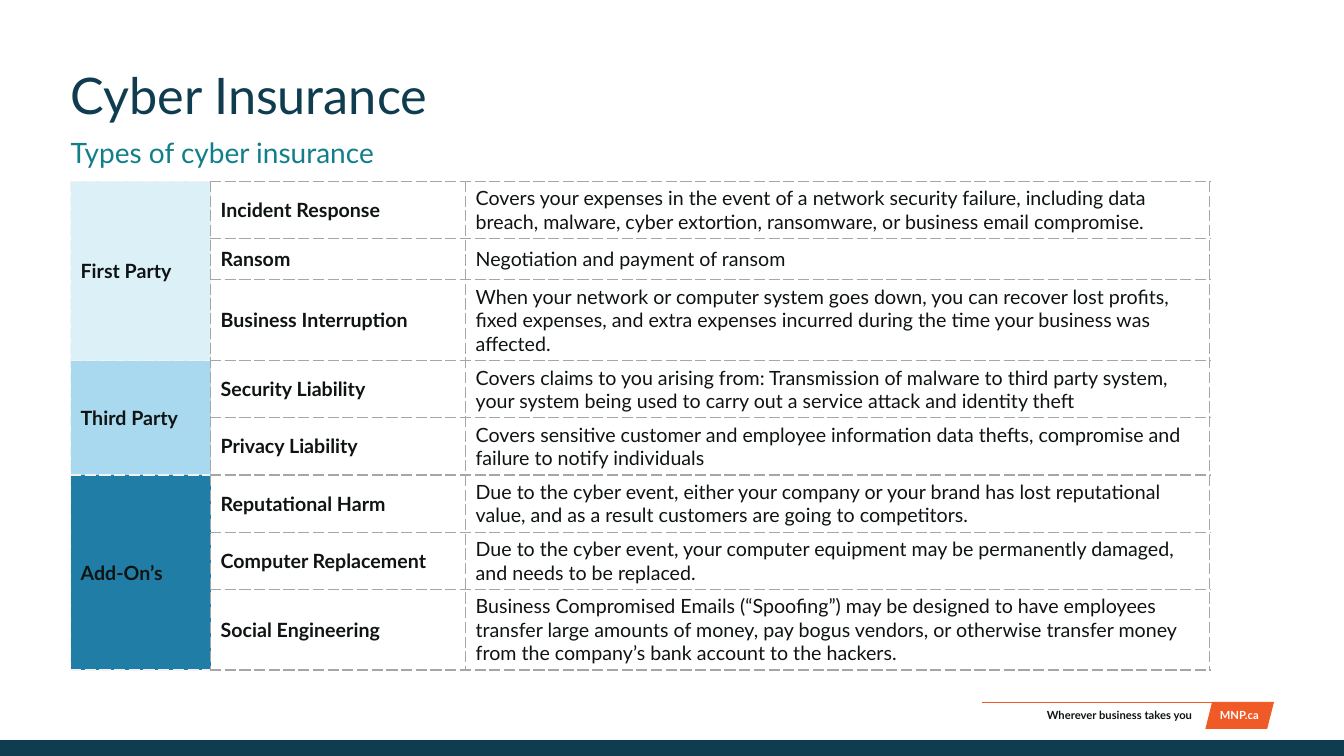
from dataclasses import dataclass

from lxml import etree
from pptx import Presentation
from pptx.dml.color import RGBColor
from pptx.enum.shapes import MSO_CONNECTOR, MSO_SHAPE
from pptx.enum.text import MSO_ANCHOR, MSO_AUTO_SIZE, PP_ALIGN
from pptx.oxml.ns import qn
from pptx.util import Pt

LEFT, CENTER, RIGHT = PP_ALIGN.LEFT, PP_ALIGN.CENTER, PP_ALIGN.RIGHT
MIDDLE = MSO_ANCHOR.MIDDLE
GROW = MSO_AUTO_SIZE.SHAPE_TO_FIT_TEXT
STRAIGHT = MSO_CONNECTOR.STRAIGHT
RECTANGLE, PARALLELOGRAM = MSO_SHAPE.RECTANGLE, MSO_SHAPE.PARALLELOGRAM

FONT = "Lato"
PAGE_WIDTH, PAGE_HEIGHT = 960, 540
MARGIN = 50.4
COLUMN_WIDTHS = (100, 182.2, 531.4)
ROW_HEIGHT = 29.5
COLORS = {
    "white": "FFFFFF",
    "ink": "0F1313",
    "navy": "0F3C4F",
    "teal": "107F8A",
    "orange": "EF5A27",
    "grid": "A6A6A6",
    "pale": "F2F2F2",
    "first": "DCF0F8",
    "third": "A8D9EE",
    "addon": "207EA6",
}


@dataclass
class Label:
    text: str
    left: float
    top: float
    width: float
    height: float
    size: float
    color: str
    bold: bool = False
    align: PP_ALIGN = LEFT
    line_spacing: float = 1.0
    padding: float = 0


@dataclass
class Block:
    shape: MSO_SHAPE
    left: float
    top: float
    width: float
    height: float
    color: str


@dataclass
class Coverage:
    name: str
    detail: str


@dataclass
class Group:
    name: str
    color: str
    coverages: list[Coverage]


BLOCKS = [
    Block(PARALLELOGRAM, 861, 501.3, 49, 19.3, "orange"),
    Block(RECTANGLE, 0, 528.6, PAGE_WIDTH, 11.4, "navy"),
]

LABELS = [
    Label("MNP.ca", 864, 502.5, 42.5, 17, 8, "white", True, CENTER, padding=3.6),
    Label("Wherever business takes you", 703.4, 502.5, 148.3, 17, 8, "ink", True, RIGHT, padding=3.6),
    Label("Types of cyber insurance", MARGIN, 94.5, 859.5, 24.5, 20, "teal", line_spacing=1.1),
    Label("Cyber Insurance", MARGIN, MARGIN, 859, 39.6, 36, "navy", line_spacing=0.9),
]

GROUPS = [
    Group("First Party", "first", [
        Coverage("Incident Response", "Covers your expenses in the event of a network security failure, including data breach, malware, cyber extortion, ransomware, or business email compromise."),
        Coverage("Ransom", "Negotiation and payment of ransom"),
        Coverage("Business Interruption", "When your network or computer system goes down, you can recover lost profits, fixed expenses, and extra expenses incurred during the time your business was affected."),
    ]),
    Group("Third Party", "third", [
        Coverage("Security Liability", "Covers claims to you arising from: Transmission of malware to third party system, your system being used to carry out a service attack and identity theft"),
        Coverage("Privacy Liability", "Covers sensitive customer and employee information data thefts, compromise and failure to notify individuals"),
    ]),
    Group("Add-On’s", "addon", [
        Coverage("Reputational Harm", "Due to the cyber event, either your company or your brand has lost reputational value, and as a result customers are going to competitors."),
        Coverage("Computer Replacement", "Due to the cyber event, your computer equipment may be permanently damaged, and needs to be replaced."),
        Coverage("Social Engineering", "Business Compromised Emails (“Spoofing”) may be designed to have employees transfer large amounts of money, pay bogus vendors, or otherwise transfer money from the company’s bank account to the hackers."),
    ]),
]


def rgb(name: str) -> RGBColor:
    return RGBColor.from_string(COLORS[name])


def add_span(para, text: str, size: float, color: str, bold: bool) -> None:
    span = para.add_run()
    span.text = text
    span.font.name = FONT
    span.font.size = Pt(size)
    span.font.bold = bold
    span.font.color.rgb = rgb(color)


def draw_label(page, label: Label) -> None:
    box = page.shapes.add_textbox(Pt(label.left), Pt(label.top), Pt(label.width), Pt(label.height))
    frame = box.text_frame
    frame.word_wrap = True
    frame.auto_size = GROW
    frame.margin_left = frame.margin_right = 0
    frame.margin_top = frame.margin_bottom = Pt(label.padding)
    para = frame.paragraphs[0]
    para.alignment = label.align
    para.line_spacing = label.line_spacing
    add_span(para, label.text, label.size, label.color, label.bold)


def draw_block(page, block: Block) -> None:
    shape = page.shapes.add_shape(
        block.shape, Pt(block.left), Pt(block.top), Pt(block.width), Pt(block.height))
    shape.shadow.inherit = False
    shape.fill.solid()
    shape.fill.fore_color.rgb = rgb(block.color)
    shape.line.fill.background()


def draw_footer_rule(page) -> None:
    rule = page.shapes.add_connector(STRAIGHT, Pt(701.3), Pt(501.6), Pt(908.6), Pt(501.6))
    rule.line.color.rgb = rgb("orange")
    rule.line.width = Pt(1)
    etree.SubElement(rule._element.spPr, qn("a:effectLst"))


def set_borders(cell, outer: str) -> None:
    properties = cell._tc.get_or_add_tcPr()
    sides = {"lnL": outer, "lnR": "grid", "lnT": outer, "lnB": outer}
    for position, (side, color) in enumerate(sides.items()):
        line = etree.Element(qn(f"a:{side}"), w=str(Pt(1)))
        fill = etree.SubElement(line, qn("a:solidFill"))
        etree.SubElement(fill, qn("a:srgbClr"), val=COLORS[color])
        etree.SubElement(line, qn("a:prstDash"), val="dash")
        properties.insert(position, line)


def style_cell(cell, fill: str, outer: str) -> None:
    cell.vertical_anchor = MIDDLE
    cell.fill.solid()
    cell.fill.fore_color.rgb = rgb(fill)
    set_borders(cell, outer)


def write_cell(cell, text: str, bold: bool) -> None:
    add_span(cell.text_frame.paragraphs[0], text, 14, "ink", bold)


def draw_table(page, groups: list[Group]) -> None:
    row_count = sum(len(group.coverages) for group in groups)
    table = page.shapes.add_table(
        row_count, len(COLUMN_WIDTHS), Pt(MARGIN), Pt(129.6),
        Pt(sum(COLUMN_WIDTHS)), Pt(ROW_HEIGHT * row_count)).table
    table.first_row = table.horz_banding = False
    for column, width in zip(table.columns, COLUMN_WIDTHS):
        column.width = Pt(width)
    for row in table.rows:
        row.height = Pt(ROW_HEIGHT)

    start = 0
    for group in groups:
        end = start + len(group.coverages)
        for index, coverage in enumerate(group.coverages, start):
            style_cell(table.cell(index, 0), group.color, "pale")
            for column, text in enumerate((coverage.name, coverage.detail), 1):
                cell = table.cell(index, column)
                style_cell(cell, "white", "grid")
                write_cell(cell, text, column == 1)
        heading = table.cell(start, 0)
        heading.merge(table.cell(end - 1, 0))
        write_cell(heading, group.name, True)
        start = end


def main() -> None:
    deck = Presentation()
    deck.slide_width, deck.slide_height = Pt(PAGE_WIDTH), Pt(PAGE_HEIGHT)
    page = deck.slides.add_slide(deck.slide_layouts[6])
    for block in BLOCKS:
        draw_block(page, block)
    draw_footer_rule(page)
    for label in LABELS:
        draw_label(page, label)
    draw_table(page, GROUPS)
    deck.save("out.pptx")


if __name__ == "__main__":
    main()
